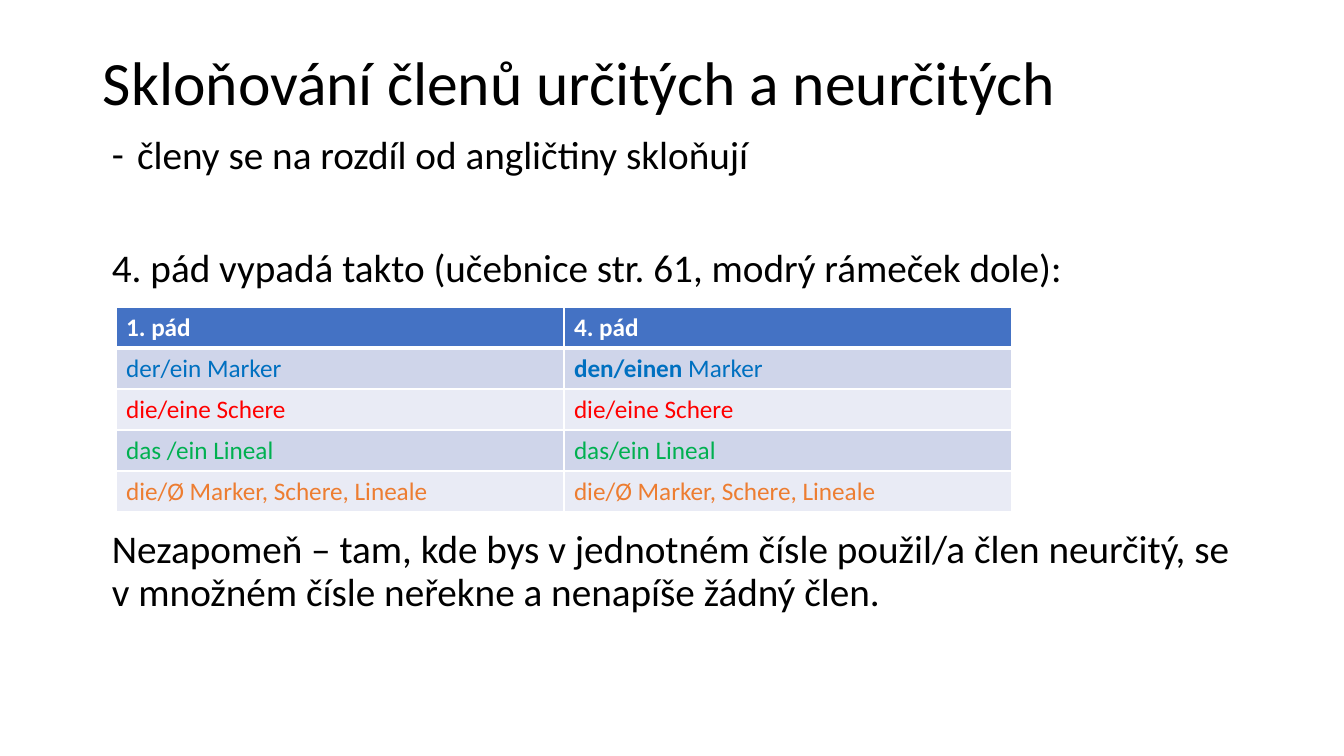
from lxml import etree
from pptx import Presentation
from pptx import util as u
from pptx.dml.color import RGBColor
from pptx.enum import text
from pptx.oxml.ns import qn

BLACK = RGBColor(0x00, 0x00, 0x00)
WHITE = RGBColor(0xFF, 0xFF, 0xFF)
HEADER = RGBColor(0x44, 0x72, 0xC4)
BAND_DARK = RGBColor(0xCF, 0xD5, 0xEA)
BAND_LIGHT = RGBColor(0xE9, 0xEB, 0xF5)
MASCULINE = RGBColor(0x00, 0x70, 0xC0)
FEMININE = RGBColor(0xFF, 0x00, 0x00)
NEUTER = RGBColor(0x00, 0xB0, 0x50)
PLURAL = RGBColor(0xED, 0x7D, 0x31)

# Text colour, then the cells of the row; a cell is a list of (words, bold) runs.
CASES = [
    (WHITE, [("1. pád", True)], [("4. pád", True)]),
    (MASCULINE, [("der/ein Marker", False)], [("den/einen", True), (" Marker", False)]),
    (FEMININE, [("die/eine Schere", False)], [("die/eine Schere", False)]),
    (NEUTER, [("das /ein Lineal", False)], [("das/ein Lineal", False)]),
    (PLURAL, [("die/Ø Marker, Schere, Lineale", False)], [("die/Ø Marker, Schere, Lineale", False)]),
]

# Words, points of space before, bullet
NOTES = [
    ("členy se na rozdíl od angličtiny skloňují", 10, "-"),
    ("4. pád vypadá takto (učebnice str. 61, modrý rámeček dole):", 50, None),
    ("Nezapomeň – tam, kde bys v jednotném čísle použil/a člen neurčitý, "
     "se v množném čísle neřekne a nenapíše žádný člen.", 171, None),
]


def px(length):
    return u.Emu(round(length * u.Inches(1) / 100.8))


class SlideWriter:
    font = "Calibri"
    title_size, body_size, table_size = 44, 28, 18
    line_spacing = 0.9

    def __init__(self, presentation):
        self.slide = presentation.slides.add_slide(presentation.slide_layouts[6])

    def run(self, paragraph, words, size, color=BLACK, bold=False):
        run = paragraph.add_run()
        run.text = words
        run.font.name = self.font
        run.font.size = u.Pt(size)
        run.font.bold = bold
        run.font.color.rgb = color

    def bullet(self, paragraph, character):
        """Give the paragraph a hanging bullet."""
        properties = paragraph._p.get_or_add_pPr()
        properties.set("marL", str(u.Inches(0.25)))
        properties.set("indent", str(-u.Inches(0.25)))
        etree.SubElement(properties, qn("a:buFont"), typeface=self.font)
        etree.SubElement(properties, qn("a:buChar"), char=character)

    def textbox(self, left, top, width, height, size, lines, anchor):
        shape = self.slide.shapes.add_textbox(px(left), px(top), px(width), px(height))
        frame = shape.text_frame
        frame.word_wrap = True
        frame.vertical_anchor = anchor
        for index, (words, space_before, bullet) in enumerate(lines):
            paragraph = frame.add_paragraph() if index else frame.paragraphs[0]
            paragraph.line_spacing = self.line_spacing
            paragraph.space_before = u.Pt(space_before)
            if bullet:
                self.bullet(paragraph, bullet)
            self.run(paragraph, words, size)

    def borders(self, cell, bottom):
        """Draw white borders of 1 pt, with the given width at the top and bottom."""
        properties = cell._tc.get_or_add_tcPr()
        for side, points in zip(("lnL", "lnR", "lnT", "lnB"), (1, 1, 1, bottom)):
            line = etree.SubElement(properties, qn("a:" + side), w=str(u.Pt(points)))
            fill = etree.SubElement(line, qn("a:solidFill"))
            etree.SubElement(fill, qn("a:srgbClr"), val=str(WHITE))

    def table(self, left, top, column_width, row_height, rows):
        columns = len(rows[0]) - 1
        table = self.slide.shapes.add_table(
            len(rows), columns, px(left), px(top),
            px(column_width * columns), px(row_height * len(rows))).table
        for row, (color, *contents) in enumerate(rows):
            fill = HEADER if row == 0 else BAND_DARK if row % 2 else BAND_LIGHT
            for column, runs in enumerate(contents):
                cell = table.cell(row, column)
                self.borders(cell, 1 if row else 3)
                cell.fill.solid()
                cell.fill.fore_color.rgb = fill
                for words, bold in runs:
                    self.run(cell.text_frame.paragraphs[0], words, self.table_size, color, bold)


def main():
    presentation = Presentation()
    presentation.slide_width, presentation.slide_height = px(1344), px(756)
    writer = SlideWriter(presentation)
    writer.textbox(93, 40, 1159, 91, writer.title_size,
                   [("Skloňování členů určitých a neurčitých", 0, None)], text.MSO_ANCHOR.MIDDLE)
    writer.textbox(102, 131, 1159, 530, writer.body_size, NOTES, text.MSO_ANCHOR.TOP)
    writer.table(116, 307, 448, 41, CASES)
    presentation.save("out.pptx")


if __name__ == "__main__":
    main()
